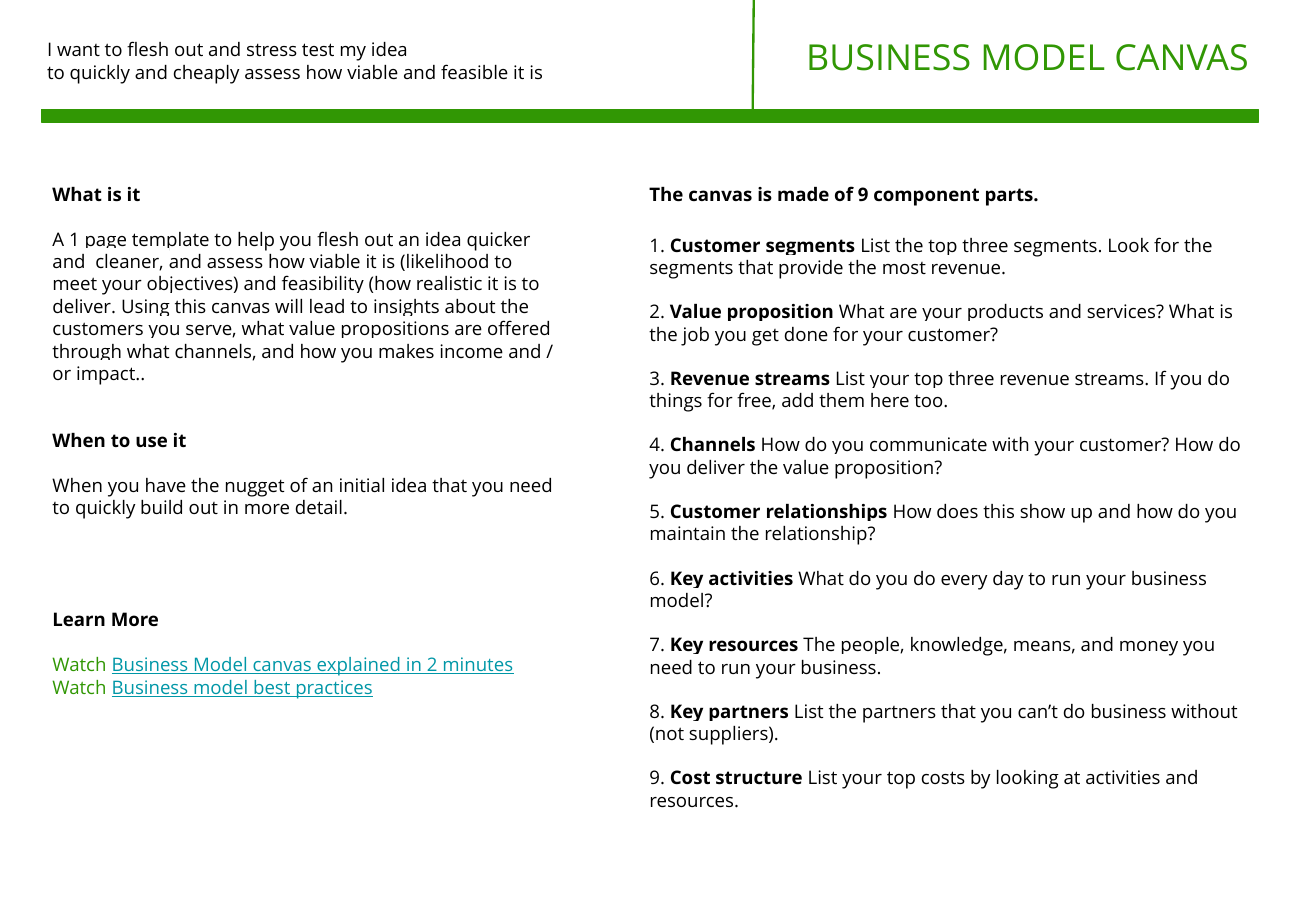
from dataclasses import dataclass

from lxml import etree
from pptx import Presentation
from pptx.dml.color import RGBColor
from pptx.enum import shapes, text
from pptx.oxml import ns
from pptx.util import Inches, Pt

GREEN = RGBColor(0x31, 0x97, 0x04)
TEAL = RGBColor(0x00, 0x97, 0xA7)
BLACK = RGBColor(0, 0, 0)
FONT = "Open Sans"
LINE = 14.4  # height of one body line in points


@dataclass
class Span:
    words: str
    bold: bool = False
    color: RGBColor = BLACK
    under: bool = False
    mark: bool = False  # white highlight


@dataclass
class Para:
    spans: list[Span]
    before: float = 0


@dataclass
class Box:
    left: float
    top: float
    width: float
    height: float
    paras: list[Para]
    size: float = 12
    inset: float = 0.1


def add_mark(run) -> None:
    fill = run.font.fill._xPr.find(ns.qn("a:solidFill"))
    mark = etree.Element(ns.qn("a:highlight"))
    etree.SubElement(mark, ns.qn("a:srgbClr"), val="FFFFFF")
    fill.addnext(mark)


def add_box(slide, box: Box) -> None:
    shape = slide.shapes.add_textbox(
        Inches(box.left), Inches(box.top), Inches(box.width), Inches(box.height))
    frame = shape.text_frame
    frame.word_wrap = True
    frame.vertical_anchor = text.MSO_ANCHOR.TOP
    frame.margin_left = frame.margin_right = Inches(box.inset)
    frame.margin_top = frame.margin_bottom = Inches(box.inset)
    for i, para in enumerate(box.paras):
        line = frame.add_paragraph() if i else frame.paragraphs[0]
        line.space_before = Pt(para.before)
        for span in para.spans:
            run = line.add_run()
            run.text = span.words
            font = run.font
            font.name, font.size = FONT, Pt(box.size)
            font.bold, font.underline = span.bold, span.under
            font.color.rgb = span.color
            if span.mark:
                add_mark(run)


def head(words: str, gap: int = 0) -> Para:
    return Para([Span(words, bold=True)], gap * LINE)


def watch(title: str, gap: int = 0) -> Para:
    return Para([Span("Watch ", color=GREEN),
                 Span(title, color=TEAL, under=True)], gap * LINE)


def part(num: int, name: str, hint: str) -> Para:
    gap = LINE + 4 if num == 1 else 14
    return Para([Span(f"{num}. ", mark=True),
                 Span(name, bold=True, mark=True),
                 Span(f" {hint}", mark=True)], gap)


PARTS = [
    ("Customer segments", "List the top three segments. Look for the segments "
     "that provide the most revenue."),
    ("Value proposition", "What are your products and services? What is the job "
     "you get done for your customer?"),
    ("Revenue streams", "List your top three revenue streams. If you do things "
     "for free, add them here too."),
    ("Channels", "How do you communicate with your customer? How do you deliver "
     "the value proposition?"),
    ("Customer relationships", "How does this show up and how do you maintain "
     "the relationship?"),
    ("Key activities", "What do you do every day to run your business model?"),
    ("Key resources", "The people, knowledge, means, and money you need to run "
     "your business."),
    ("Key partners", "List the partners that you can’t do business without "
     "(not suppliers)."),
    ("Cost structure", "List your top costs by looking at activities and "
     "resources."),
]

GOAL = [
    Para([Span("I want to flesh out and stress test my idea")]),
    Para([Span("to quickly and cheaply assess how viable and feasible it is")]),
]

ABOUT = [
    head("What is it"),
    Para([
        Span("A 1 page template to help you "),
        Span("flesh out an idea quicker and  cleaner, ", mark=True),
        Span("and assess how viable it is (likelihood to meet your objectives) "
             "and feasibility (how realistic it is to deliver. "),
        Span("Using this canvas will lead to insights about the customers you "
             "serve, what value propositions are offered through what channels, "
             "and how you makes income and / or impact..", mark=True),
    ], LINE),
    head("When to use it", 2),
    Para([Span("When you have the nugget of an initial idea that you need to "
               "quickly build out in more detail.")], LINE),
    head("Learn More", 4),
    watch("Business Model canvas explained in 2 minutes", 1),
    watch("Business model best practices"),
]

STEPS = [Para([Span("The canvas is made of 9 component parts.", bold=True, mark=True)])]
STEPS += [part(num, *item) for num, item in enumerate(PARTS, 1)]

BOXES = [
    Box(0.29, 0.21, 10.95, 0.92, GOAL, inset=0.13),
    Box(0.37, 1.53, 4.74, 4.85, ABOUT),
    Box(7.1, 0.21, 4.92, 0.59,
        [Para([Span("BUSINESS MODEL CANVAS", color=GREEN)])], size=23),
    Box(5.7, 1.53, 5.54, 5.87, STEPS),
]


def main() -> None:
    deck = Presentation()
    deck.slide_width, deck.slide_height = Inches(11.75), Inches(8.25)
    slide = deck.slides.add_slide(deck.slide_layouts[6])

    # Text blocks
    for box in BOXES:
        add_box(slide, box)

    # Green bar under the header
    bar = slide.shapes.add_shape(
        shapes.MSO_SHAPE.RECTANGLE,
        Inches(0.37), Inches(0.98), Inches(10.87), Inches(0.11))
    bar.shadow.inherit = False
    bar.fill.solid()
    bar.fill.fore_color.rgb = GREEN
    bar.line.color.rgb = GREEN
    bar.line.width = Pt(0.75)

    # Divider beside the title
    rule = slide.shapes.add_connector(
        shapes.MSO_CONNECTOR.STRAIGHT,
        Inches(6.73), Inches(0), Inches(6.72), Inches(1.04))
    rule.line.color.rgb = GREEN
    rule.line.width = Pt(1.5)
    etree.SubElement(rule._element.spPr, ns.qn("a:effectLst"))

    deck.save("out.pptx")


if __name__ == "__main__":
    main()
